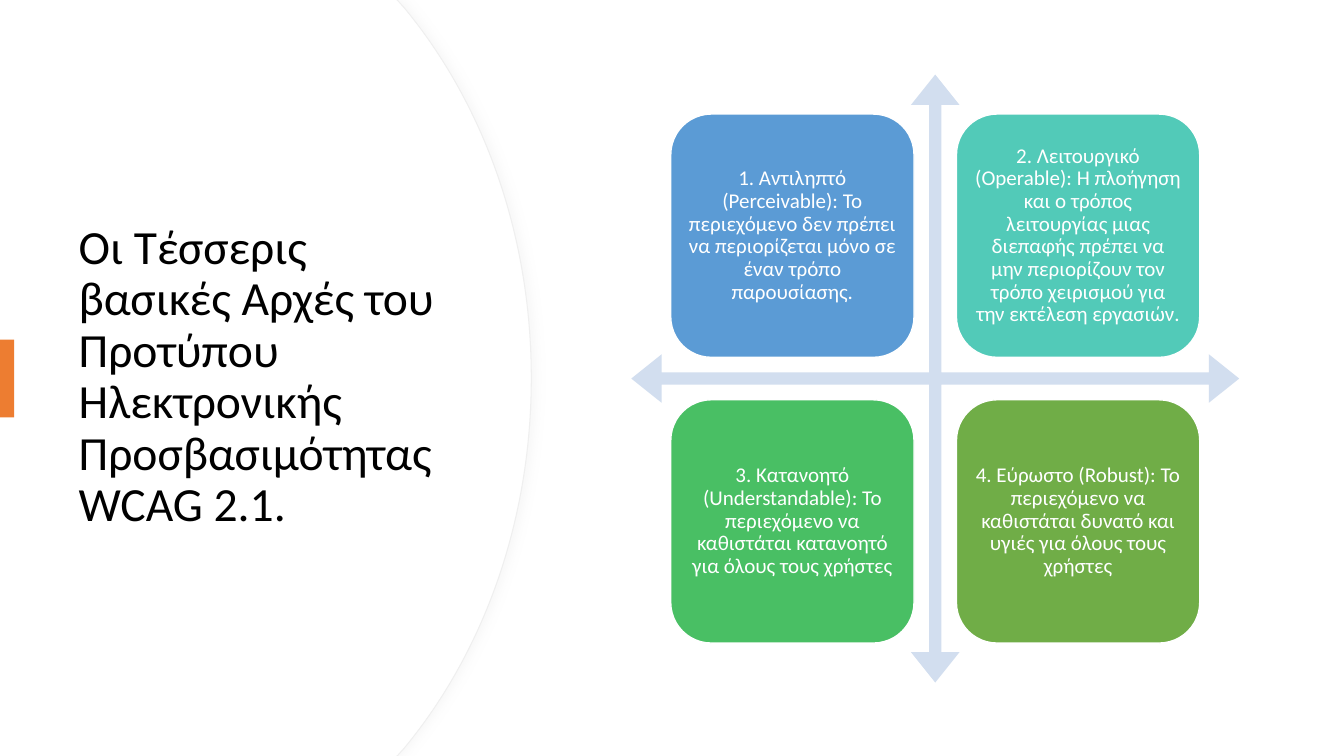
from lxml import etree
from pptx import Presentation
from pptx import util as u
from pptx.dml.color import RGBColor
from pptx.enum import shapes, text
from pptx.oxml.ns import qn

# Content
TITLE = "Οι Τέσσερις βασικές Αρχές του Προτύπου Ηλεκτρονικής Προσβασιμότητας WCAG 2.1."
PRINCIPLES = [
    ("1. Αντιληπτό (Perceivable): Το περιεχόμενο δεν πρέπει να περιορίζεται "
     "μόνο σε έναν τρόπο παρουσίασης.", "5B9BD5"),
    ("2. Λειτουργικό (Operable): Η πλοήγηση και ο τρόπος λειτουργίας μιας διεπαφής "
     "πρέπει να μην περιορίζουν τον τρόπο χειρισμού για την εκτέλεση εργασιών.", "52CAB8"),
    ("3. Κατανοητό (Understandable): Το περιεχόμενο να καθιστάται κατανοητό "
     "για όλους τους χρήστες", "49BF64"),
    ("4. Εύρωστο (Robust): Το περιεχόμενο να καθιστάται δυνατό και υγιές "
     "για όλους τους χρήστες", "70AD47"),
]

# Theme and measures (cm)
THEME = dict(font="Calibri", title=34, body=15, ink="000000", paper="FFFFFF",
             edge="EFEFEF", shade="D9D9D9", accent="ED7D31", arrow="D2DEEF")
WIDTH, HEIGHT = 33.87, 19.05
CENTER_X, CENTER_Y = 23.57, 9.54
ARROW, TILE, GAP, INSET = 15.32, 6.13, 1.07, 0.16
# Upper half of the panel's side: corner, curve start, two handles, middle
SIDE = [(10.01, 0), (10.19, 0.2), (12.17, 2.59), (13.39, 5.89), (13.39, HEIGHT / 2)]


def rgb(value):
    return RGBColor.from_string(value)


def paint(sp, fill, line=None, width=1):
    sp.shadow.inherit = False
    sp.fill.solid()
    sp.fill.fore_color.rgb = rgb(fill)
    if line:
        sp.line.color.rgb = rgb(line)
        sp.line.width = u.Pt(width)
    else:
        sp.line.fill.background()


def write(sp, content, size, color, align, **frame):
    tf = sp.text_frame
    frame = dict(word_wrap=True, auto_size=text.MSO_AUTO_SIZE.NONE,
                 vertical_anchor=text.MSO_ANCHOR.MIDDLE, **frame)
    for name, value in frame.items():
        setattr(tf, name, value)
    p = tf.paragraphs[0]
    p.alignment, p.line_spacing = align, 0.9
    r = p.add_run()
    r.text = content
    for name, value in dict(name=THEME["font"], size=u.Pt(size)).items():
        setattr(r.font, name, value)
    r.font.color.rgb = rgb(color)


def add_panel(shift):
    """White panel with a bulging right side, mirrored about mid-height."""
    lower = [(x, HEIGHT - y) for x, y in reversed(SIDE[:-1])]
    points = [(u.Cm(x - shift), u.Cm(y)) for x, y in SIDE + lower] + [(0, u.Cm(HEIGHT))]
    builder = s.shapes.build_freeform(0, 0)
    builder.add_line_segments(points, close=True)
    sp = builder.convert_to_shape()
    # Join each handle, handle, end triple into one curve
    lines = list(sp._element.iter(qn("a:lnTo")))
    for first in (2, 5):
        curve = etree.Element(qn("a:cubicBezTo"))
        lines[first].addprevious(curve)
        for line in lines[first:first + 3]:
            curve.append(line[0])
            line.getparent().remove(line)
    return sp


def add_shadow(sp, color, alpha, blur, distance):
    effects = sp._element.spPr.find(qn("a:effectLst"))
    shadow = etree.SubElement(effects, qn("a:outerShdw"), blurRad=str(u.Pt(blur)),
                              dist=str(u.Pt(distance)), dir="0", algn="l", rotWithShape="0")
    tone = etree.SubElement(shadow, qn("a:srgbClr"), val=color)
    etree.SubElement(tone, qn("a:alpha"), val=str(alpha * 1000))


prs = Presentation()
prs.slide_width, prs.slide_height = u.Cm(WIDTH), u.Cm(HEIGHT)
s = prs.slides.add_slide(prs.slide_layouts[5])

# Curved panel: shaded edge, then plain face
edge = add_panel(0)
paint(edge, THEME["paper"], THEME["edge"], 0.75)
add_shadow(edge, THEME["shade"], 20, 7, 3)
paint(add_panel(0.03), THEME["paper"])

# Title, raised above the panel
title = s.shapes.title
s.shapes._spTree.append(title._element)
for name, value in dict(left=1.73, top=3.23, width=10.01, height=12.57).items():
    setattr(title, name, u.Cm(value))
write(title, TITLE, THEME["title"], THEME["ink"], text.PP_ALIGN.LEFT)

# Accent bar
bar = s.shapes.add_shape(shapes.MSO_SHAPE.RECTANGLE, 0, u.Cm(8.56), u.Cm(0.36), u.Cm(1.96))
paint(bar, THEME["accent"])

# Four-way arrow
matrix = s.shapes.add_group_shape()
arrow = matrix.shapes.add_shape(
    shapes.MSO_SHAPE.QUAD_ARROW, u.Cm(CENTER_X - ARROW / 2), u.Cm(CENTER_Y - ARROW / 2),
    u.Cm(ARROW), u.Cm(ARROW))
for i, value in enumerate((0.02, 0.04, 0.05)):
    arrow.adjustments[i] = value
paint(arrow, THEME["arrow"])

# Principle tiles, two by two
margins = {f"margin_{side}": u.Cm(INSET) for side in ("left", "top", "right", "bottom")}
for i, (content, color) in enumerate(PRINCIPLES):
    row, col = divmod(i, 2)
    left = CENTER_X - GAP / 2 - TILE + col * (TILE + GAP)
    top = CENTER_Y - GAP / 2 - TILE + row * (TILE + GAP)
    tile = matrix.shapes.add_shape(shapes.MSO_SHAPE.ROUNDED_RECTANGLE, u.Cm(left), u.Cm(top),
                                   u.Cm(TILE), u.Cm(TILE))
    paint(tile, color, THEME["paper"])
    write(tile, content, THEME["body"], THEME["paper"], text.PP_ALIGN.CENTER, **margins)

prs.save("out.pptx")
